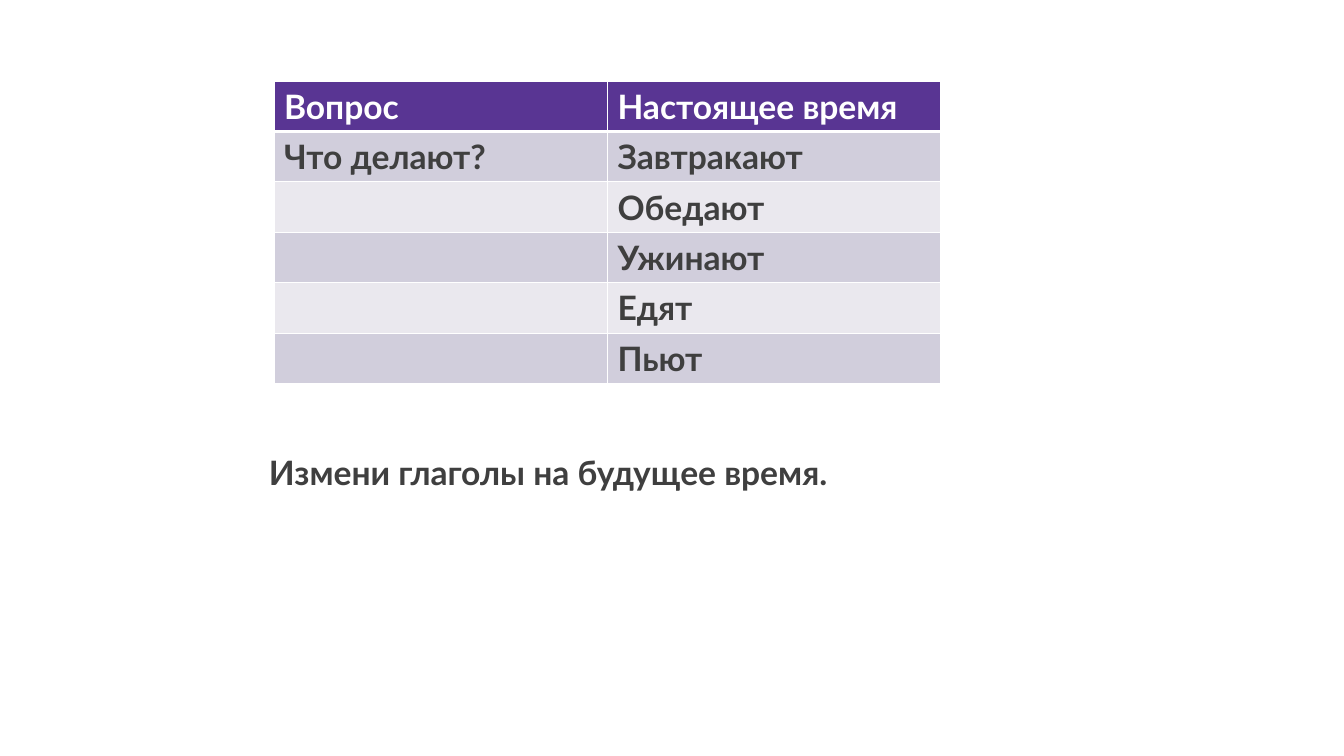
"""Build a slide with a table of verbs and a task below it."""
import pptx
import pptx.dml.color
import pptx.oxml.ns
import pptx.util
from lxml import etree

RGB = pptx.dml.color.RGBColor
WHITE = RGB(0xFF, 0xFF, 0xFF)
PURPLE = RGB(0x59, 0x35, 0x93)
DARK = RGB(0x3F, 0x3F, 0x3F)
LILAC = RGB(0xD1, 0xCE, 0xDC)
PALE = RGB(0xEA, 0xE8, 0xEE)
SCALE = 914400 / 100.8
ROWS = [
    ("Вопрос", "Настоящее время"),
    ("Что делают?", "Завтракают"),
    ("", "Обедают"),
    ("", "Ужинают"),
    ("", "Едят"),
    ("", "Пьют"),
]


def px(num):
    return pptx.util.Emu(round(num * SCALE))


def write(frame, text, size=24, color=DARK, bold=True, face="Lato"):
    run = frame.paragraphs[0].add_run()
    run.text = text
    font = run.font
    font.size = pptx.util.Pt(size)
    font.name = face
    font.bold = bold
    font.color.rgb = color


def edge(cell, side, width):
    props = cell._tc.get_or_add_tcPr()
    qn = pptx.oxml.ns.qn
    line = etree.SubElement(props, qn("a:ln" + side), w=str(pptx.util.Pt(width)))
    fill = etree.SubElement(line, qn("a:solidFill"))
    etree.SubElement(fill, qn("a:srgbClr"), val=str(WHITE))


def add_grid(slide, left, top, wide, high):
    count = len(ROWS)
    frame = slide.shapes.add_table(count, 2, px(left), px(top), px(wide), px(high * count))
    for i, words in enumerate(ROWS):
        frame.table.rows[i].height = px(high)
        for j, word in enumerate(words):
            cell = frame.table.cell(i, j)
            for side in "LRTB":
                thick = (i, side) in ((0, "B"), (1, "T"))
                edge(cell, side, 3 if thick else 1)
            cell.fill.solid()
            cell.fill.fore_color.rgb = PURPLE if i == 0 else LILAC if i % 2 else PALE
            if word:
                write(cell.text_frame, word, color=DARK if i else WHITE)


def add_note(slide, text, left, top, wide, high):
    frame = slide.shapes.add_textbox(px(left), px(top), px(wide), px(high)).text_frame
    frame.word_wrap = True
    write(frame, text)


def main():
    deck = pptx.Presentation()
    deck.slide_width, deck.slide_height = px(1344), px(756)
    slide = deck.slides.add_slide(deck.slide_layouts[6])
    add_grid(slide, 274, 81, 667, 50)
    add_note(slide, "Измени глаголы на будущее время.", 259, 447, 685, 50)
    deck.save("out.pptx")


if __name__ == "__main__":
    main()
